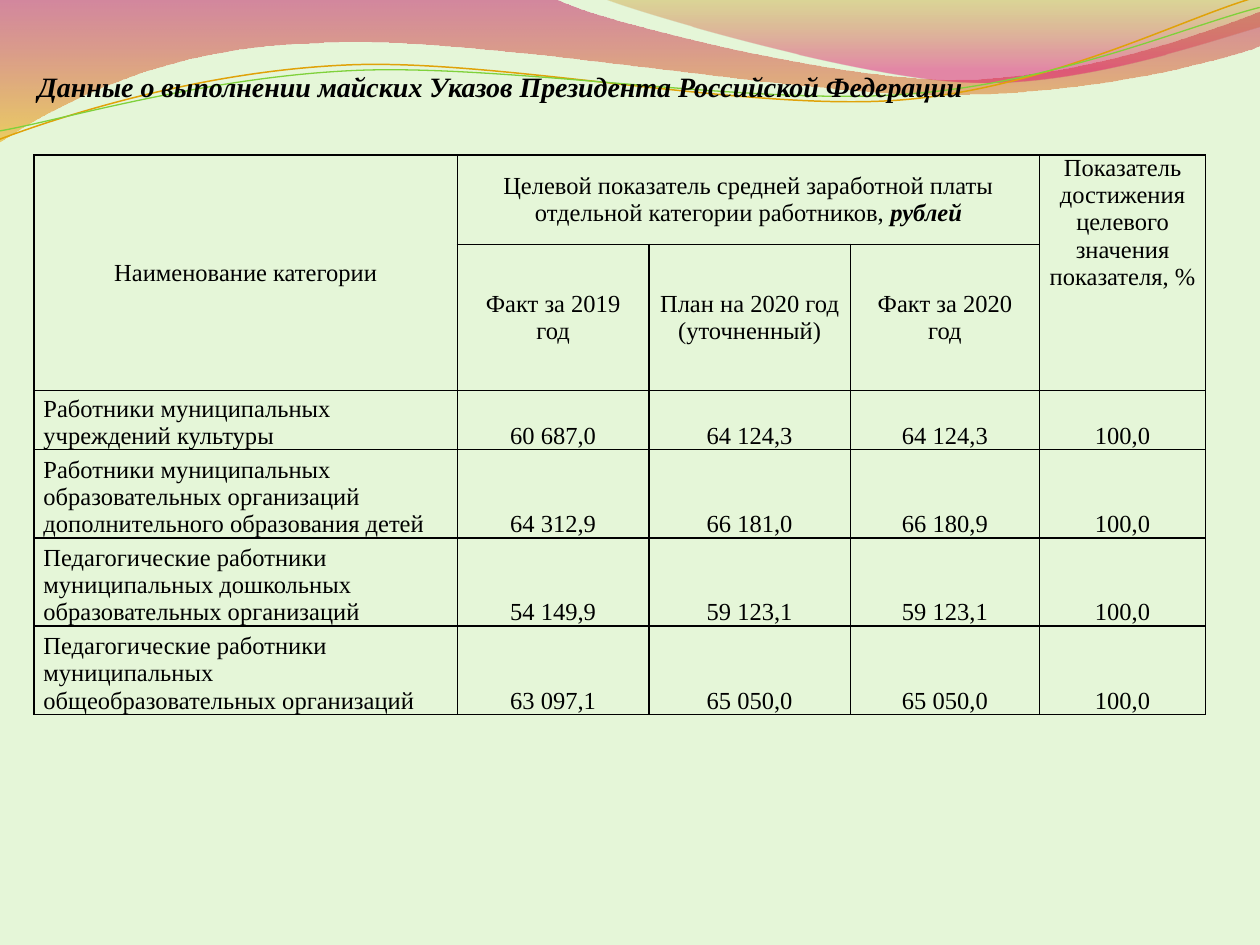
import math

from lxml import etree
from pptx import Presentation
from pptx.dml.color import RGBColor
from pptx.enum.text import MSO_ANCHOR, PP_ALIGN
from pptx.oxml.ns import qn
from pptx.util import Inches, Pt

TOP, MIDDLE, BOTTOM = MSO_ANCHOR.TOP, MSO_ANCHOR.MIDDLE, MSO_ANCHOR.BOTTOM
LEFT, CENTER = PP_ALIGN.LEFT, PP_ALIGN.CENTER
FONT = "Times New Roman"
TILT = 2.7


def color(value):
    return RGBColor.from_string(value)


def draw_outline(slide, start, segments, closed):
    points = [start]
    for segment in segments:
        points += zip(segment[::2], segment[1::2])
    points = [(Inches(x), Inches(y)) for x, y in points]
    builder = slide.shapes.build_freeform(*points[0])
    builder.add_line_segments(points[1:], close=closed)
    outline = builder.convert_to_shape()
    outline.shadow.inherit = False
    steps = iter(list(outline._element.iter(qn("a:lnTo"))))
    for segment in segments:
        step = next(steps)
        if len(segment) == 6:
            curve = etree.Element(qn("a:cubicBezTo"))
            step.addprevious(curve)
            for control in (step, next(steps), next(steps)):
                curve.append(control[0])
                control.getparent().remove(control)
    return outline


prs = Presentation()
prs.slide_width, prs.slide_height = Inches(10), Inches(7.5)
slide = prs.slides.add_slide(prs.slide_layouts[5])
slide.background.fill.solid()
slide.background.fill.fore_color.rgb = color("E5F6D8")

waves = [
    ((0, 0),
     [(4.4, -0.01), (4.76, 0.17, 6.64, 0.63, 7.58, 0.63), (8.53, 0.63, 9.58, 0.26, 10, 0.09),
      (10.01, 0.36), (9.83, 0.44, 8.7, 0.76, 7.46, 0.75), (6.22, 0.75, 3.82, 0.28, 2.57, 0.34),
      (1.29, 0.36, 0.46, 0.83, -0.01, 1.13)],
     [(0, "BD0059", 45), (1, "F0AB00", 55)]),
    ((4.79, -0.01),
     [(5.09, 0.11, 6.82, 0.62, 7.69, 0.65), (8.56, 0.69, 9.61, 0.32, 10, 0.21), (10, 0)],
     [(0, "C38B00", 30), (0.8, "E1006B", 45)]),
]
for start, segments, stops in waves:
    wave = draw_outline(slide, start, segments, True)
    wave.line.fill.background()
    wave.fill.gradient()
    wave.fill.gradient_angle = 270
    for stop, (position, tone, _) in zip(wave.fill.gradient_stops, stops):
        stop.position = position
        stop.color.rgb = color(tone)
    for tint, (_, _, opacity) in zip(wave._element.spPr.iter(qn("a:srgbClr")), stops):
        etree.SubElement(tint, qn("a:alpha"), val=str(opacity * 1000))

strands = [
    ((0, 1.11),
     [(0.48, 0.93, 1.58, 0.57, 2.77, 0.52), (3.95, 0.47, 5.93, 0.89, 7.13, 0.8),
      (8.33, 0.71, 9.38, 0.15, 9.98, -0.02)], (4.99, 0.57), "E0A209", 0.85),
    ((0, 1.04),
     [(0.47, 0.96, 1.64, 0.61, 2.83, 0.56), (4.03, 0.51, 5.97, 0.84, 7.17, 0.75),
      (8.36, 0.67, 9.41, 0.21, 10, 0.06)], (5, 0.59), "7FD13B", 0.75),
]
cosine, sine = math.cos(math.radians(TILT)), math.sin(math.radians(TILT))
for start, segments, (center_x, center_y), tone, width in strands:
    level = []
    for segment in [start] + segments:
        flat = []
        for x, y in zip(segment[::2], segment[1::2]):
            dx, dy = x - center_x, y - center_y
            flat += [center_x + dx * cosine - dy * sine, center_y + dx * sine + dy * cosine]
        level.append(flat)
    strand = draw_outline(slide, level[0], level[1:], False)
    strand.left = Inches(center_x) - strand.width // 2
    strand.top = Inches(center_y) - strand.height // 2
    strand.rotation = 360 - TILT
    strand.fill.background()
    strand.line.color.rgb = color(tone)
    strand.line.width = Pt(width)

header_rows = [
    ["Наименование категории",
     "Целевой показатель средней заработной платы отдельной категории работников, ", "", "",
     "Показатель достижения целевого значения показателя, %"],
    ["", "Факт за 2019 год", "План на 2020 год (уточненный)", "Факт за 2020 год", ""],
]
category_rows = [
    ["Работники муниципальных учреждений культуры",
     "60 687,0", "64 124,3", "64 124,3", "100,0"],
    ["Работники муниципальных образовательных организаций дополнительного образования детей",
     "64 312,9", "66 181,0", "66 180,9", "100,0"],
    ["Педагогические работники муниципальных дошкольных образовательных организаций",
     "54 149,9", "59 123,1", "59 123,1", "100,0"],
    ["Педагогические работники муниципальных общеобразовательных организаций",
     "63 097,1", "65 050,0", "65 050,0", "100,0"],
]
rows = header_rows + category_rows
column_widths = [3.36, 1.52, 1.6, 1.5, 1.32]
row_heights = [0.71, 1.16, 0.47, 0.7, 0.7, 0.7]
salaries = slide.shapes.add_table(
    len(rows), len(column_widths), Inches(0.27), Inches(1.23),
    Inches(sum(column_widths)), Inches(sum(row_heights))).table
salaries.first_row = salaries.horz_banding = False
for column, width in zip(salaries.columns, column_widths):
    column.width = Inches(width)
for row, height in zip(salaries.rows, row_heights):
    row.height = Inches(height)
for first, last in [((0, 0), (1, 0)), ((0, 1), (0, 3)), ((0, 4), (1, 4))]:
    salaries.cell(*first).merge(salaries.cell(*last))

for r, texts in enumerate(rows):
    is_header = r < len(header_rows)
    for c, text in enumerate(texts):
        cell = salaries.cell(r, c)
        cell.margin_left = cell.margin_right = Pt(5.4)
        cell.margin_top = cell.margin_bottom = 0
        cell.vertical_anchor = MIDDLE if is_header else BOTTOM
        paragraph = cell.text_frame.paragraphs[0]
        paragraph.alignment = CENTER if is_header or c else LEFT
        paragraph.font.name, paragraph.font.size = FONT, Pt(14)
        paragraph.font.color.rgb = color("000000")
        if text:
            paragraph.add_run().text = text
        properties = cell._tc.get_or_add_tcPr()
        for side in ("a:lnL", "a:lnR", "a:lnT", "a:lnB"):
            border = etree.SubElement(properties, qn(side), w=str(Pt(1)))
            paint = etree.SubElement(border, qn("a:solidFill"))
            etree.SubElement(paint, qn("a:srgbClr"), val="000000")
        cell.fill.background()

salaries.cell(0, 4).vertical_anchor = TOP
unit = salaries.cell(0, 1).text_frame.paragraphs[0].add_run()
unit.text = "рублей"
unit.font.bold = unit.font.italic = True

title = slide.shapes.title
title.left, title.top, title.width, title.height = Inches(0), Inches(0.5), Inches(9.29), Inches(0.37)
title.text_frame.text = "Данные о выполнении майских Указов Президента Российской Федерации"
title.text_frame.vertical_anchor = MIDDLE
heading = title.text_frame.paragraphs[0]
heading.alignment = LEFT
heading.font.name, heading.font.size = FONT, Pt(16)
heading.font.bold = heading.font.italic = True
heading.font.color.rgb = color("000000")
heading._p.get_or_add_pPr().set("indent", str(Inches(0.2)))
slide.shapes._spTree.append(title._element)

prs.save("out.pptx")
